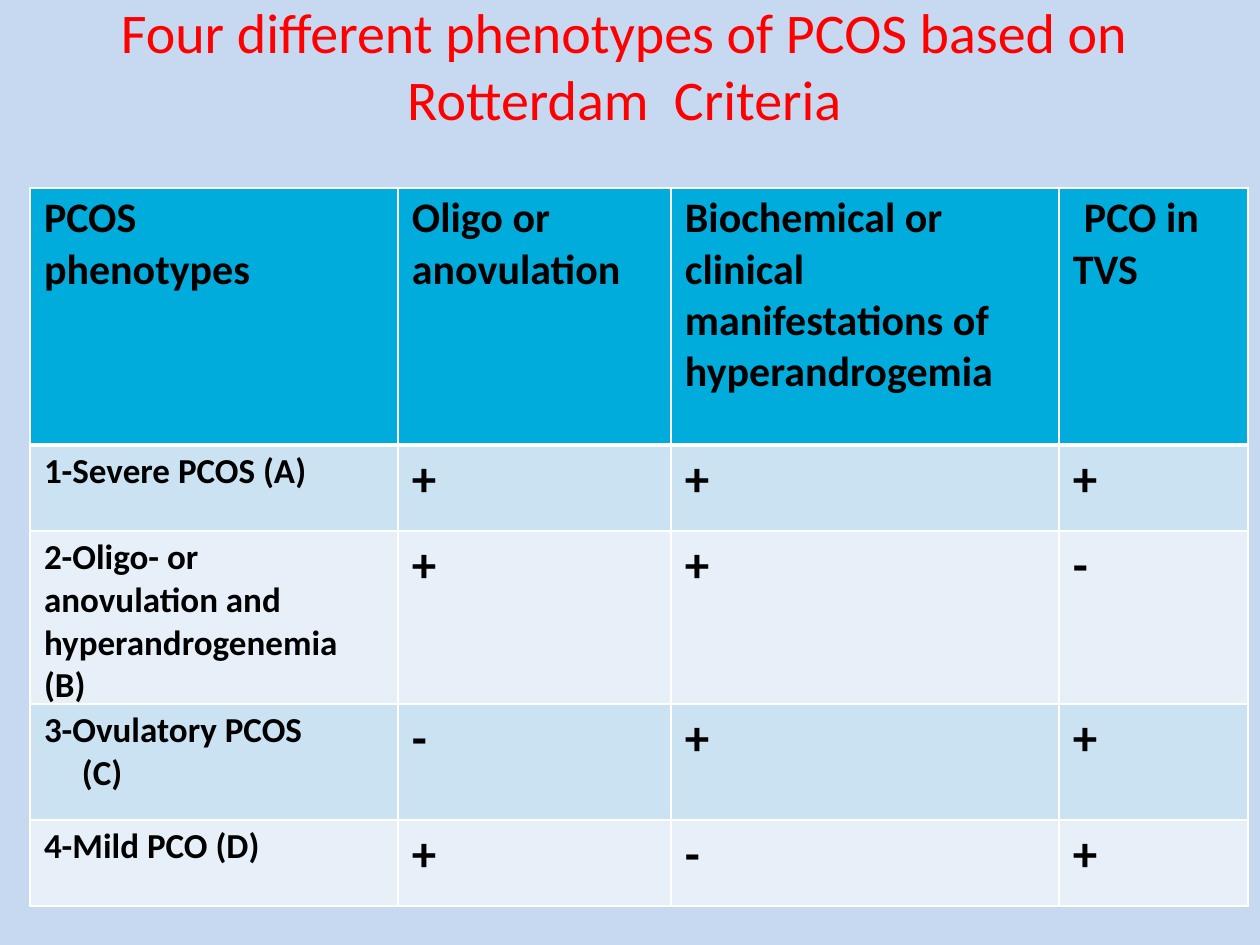
from lxml import etree
from pptx import Presentation
from pptx import util as u
from pptx.dml.color import RGBColor
from pptx.enum import text
from pptx.oxml.ns import qn

PX = 914400 / 126
BACK = RGBColor(0xC6, 0xD9, 0xF1)
RED = RGBColor(0xFF, 0x00, 0x00)
BLACK = RGBColor(0x00, 0x00, 0x00)
WHITE = RGBColor(0xFF, 0xFF, 0xFF)
HEADER = RGBColor(0x00, 0xAC, 0xDC)
BANDS = [RGBColor(0xCA, 0xE2, 0xF1), RGBColor(0xE7, 0xF0, 0xF8)]

COLS = [368, 273, 388, 189]
RIGHT_INSETS = [54, 0, 56, 0]
ROWS = [257, 86, 170, 116, 86]
HEADINGS = [
    ["PCOS", "phenotypes"],
    ["Oligo or", "anovulation"],
    ["Biochemical or clinical manifestations of hyperandrogemia"],
    ["PCO in", "TVS"],
]
PHENOTYPES = [
    ("1-Severe PCOS (A)", "+++"),
    ("2-Oligo- or anovulation and hyperandrogenemia (B)", "++-"),
    ("3-Ovulatory PCOS (C)", "-++"),
    ("4-Mild PCO (D)", "+-+"),
]


def px(n):
    return u.Emu(round(n * PX))


def write(p, content, size, color, font="Calibri", bold=False, align=None,
          before=0, left=0, first=0):
    p.alignment = align
    p.space_before = u.Pt(before)
    if left or first:
        pPr = p._p.get_or_add_pPr()
        pPr.set("marL", str(px(left)))
        pPr.set("indent", str(px(first)))
    r = p.add_run()
    r.text = content
    r.font.name = font
    r.font.size = u.Pt(size)
    r.font.bold = bold
    r.font.color.rgb = color


class Deck:
    def __init__(self, width, height):
        self.prs = Presentation()
        self.prs.slide_width, self.prs.slide_height = px(width), px(height)
        self.s = self.prs.slides.add_slide(self.prs.slide_layouts[6])

    def background(self, color):
        fill = self.s.background.fill
        fill.solid()
        fill.fore_color.rgb = color

    def title(self, x, y, w, h, content):
        tf = self.s.shapes.add_textbox(px(x), px(y), px(w), px(h)).text_frame
        tf.word_wrap = True
        tf.vertical_anchor = text.MSO_ANCHOR.MIDDLE
        tf.margin_left = tf.margin_right = tf.margin_bottom = 0
        tf.margin_top = px(2)
        write(tf.paragraphs[0], content, 32, RED,
              align=text.PP_ALIGN.CENTER, before=1)

    def table(self, x, y, cols, rows):
        tbl = self.s.shapes.add_table(len(rows), len(cols), px(x), px(y),
                                      px(sum(cols)), px(sum(rows))).table
        for column, w in zip(tbl.columns, cols):
            column.width = px(w)
        for row, h in zip(tbl.rows, rows):
            row.height = px(h)
        return tbl

    def cell(self, c, lines, size, fill, right=0, top=1, bottom=1, **fmt):
        c.margin_left, c.margin_right = px(14), px(right)
        c.margin_top, c.margin_bottom = px(5), 0
        self.borders(c, lnL=1, lnR=1, lnT=top, lnB=bottom)
        c.fill.solid()
        c.fill.fore_color.rgb = fill
        tf = c.text_frame
        for i, line in enumerate(lines):
            p = tf.add_paragraph() if i else tf.paragraphs[0]
            layout = {} if i else {"before": 3, **fmt}
            write(p, line, size, BLACK, bold=True, **layout)

    def borders(self, c, **widths):
        tcPr = c._tc.get_or_add_tcPr()
        for tag, width in widths.items():
            ln = etree.SubElement(tcPr, qn("a:" + tag), w=str(u.Pt(width)))
            fill = etree.SubElement(ln, qn("a:solidFill"))
            etree.SubElement(fill, qn("a:srgbClr"), val=str(WHITE))


def main():
    deck = Deck(1260, 945)
    deck.background(BACK)
    deck.title(11, -5, 1227, 137,
               "Four different phenotypes of PCOS based on Rotterdam  Criteria")
    tbl = deck.table(30, 188, COLS, ROWS)
    for j, lines in enumerate(HEADINGS):
        deck.cell(tbl.cell(0, j), lines, 24, HEADER, right=RIGHT_INSETS[j],
                  bottom=3, left=11 if j == 3 else 0)
    for i, (name, marks) in enumerate(PHENOTYPES, 1):
        fill = BANDS[(i - 1) % 2]
        top = 3 if i == 1 else 1
        hang = 38 if i == 3 else 0
        deck.cell(tbl.cell(i, 0), [name], 20, fill, right=RIGHT_INSETS[0],
                  top=top, left=hang, first=-hang)
        for j, mark in enumerate(marks, 1):
            deck.cell(tbl.cell(i, j), [mark], 28, fill, top=top)
    deck.prs.save("out.pptx")


if __name__ == "__main__":
    main()
